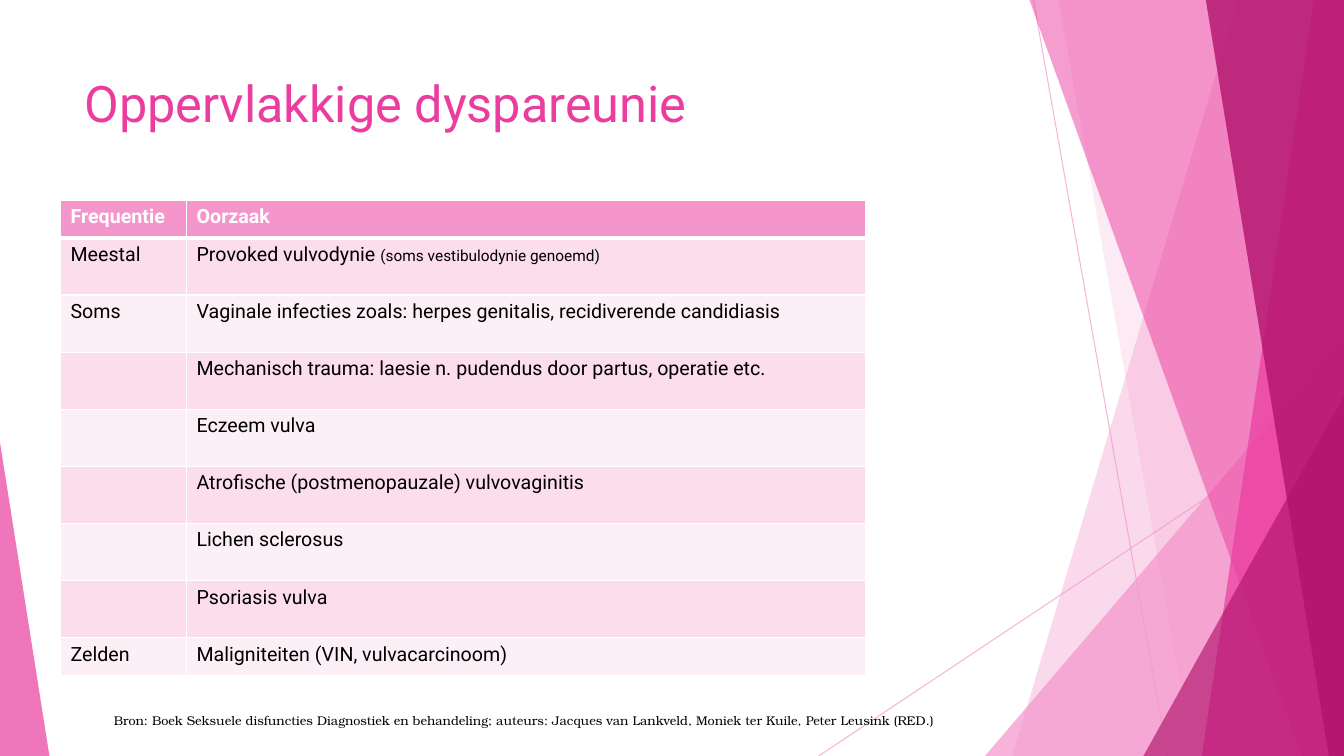
from lxml import etree
from pptx import Presentation, util as u
from pptx.dml.color import RGBColor
from pptx.enum import shapes, text
from pptx.oxml import ns

THEME = {
    "light": "F496CB", "pink": "EB3D9F", "dark": "B2136D",
    "white": "FFFFFF", "black": "000000", "bands": ("FBDDEC", "FDEFF6"),
    "sans": "Roboto", "serif": "TeX Gyre Bonum",
    "title": 36, "body": 14, "small": 11, "source": 9,
}
WIDTH, HEIGHT = 13.33, 7.5

TITLE = "Oppervlakkige dyspareunie"
SOURCE = ("Bron: Boek Seksuele disfuncties Diagnostiek en behandeling; auteurs: "
          "Jacques van Lankveld, Moniek ter Kuile, Peter Leusink (RED.)")
HEADER = ("Frequentie", "Oorzaak")
CAUSES = [
    ("Meestal", "Provoked vulvodynie ", "(soms vestibulodynie genoemd)"),
    ("Soms", "Vaginale infecties zoals: herpes genitalis, recidiverende candidiasis"),
    ("", "Mechanisch trauma: laesie n. pudendus door partus, operatie etc."),
    ("", "Eczeem vulva"),
    ("", "Atrofische (postmenopauzale) vulvovaginitis"),
    ("", "Lichen sclerosus"),
    ("", "Psoriasis vulva"),
    ("Zelden", "Maligniteiten (VIN, vulvacarcinoom)"),
]
TABLE_LEFT, TABLE_TOP, TABLE_HEIGHT = 0.6, 1.99, 4.71
COLUMN_WIDTHS = (1.25, 6.74)
END_ROW_HEIGHT = 0.37

RAYS = [((10.25, 0), (11.58, HEIGHT)), ((WIDTH, 4.03), (8.12, HEIGHT))]
FACETS = [
    ("band", 12.28, 10.04, "light", 36),
    ("band", 10.5, 11.83, "light", 20),
    ("triangle", 9.77, 3.33, "light", 72),
    ("band", 10.21, 12.91, "pink", 50),
    ("band", 13.03, 11.92, "pink", 70),
    ("band", 11.96, 13.18, "dark", 80),
    ("triangle", 11.34, 3.93, "dark", 66),
]
CORNER = (0.49, 4.39, "pink", 70)


def set_opacity(fill_parent, percent):
    color = fill_parent.find(".//" + ns.qn("a:srgbClr"))
    etree.SubElement(color, ns.qn("a:alpha"), val=str(percent * 1000))


def paint(shape, color, opacity):
    shape.shadow.inherit = False
    shape.fill.solid()
    shape.fill.fore_color.rgb = RGBColor.from_string(THEME[color])
    set_opacity(shape._element.spPr, opacity)
    shape.line.fill.background()


def add_ray(slide, start, end):
    points = [u.Inches(value) for value in start + end]
    ray = slide.shapes.add_connector(shapes.MSO_CONNECTOR.STRAIGHT, *points)
    ray.line.width = u.Pt(0.75)
    ray.line.color.rgb = RGBColor.from_string(THEME["light"])
    properties = ray._element.spPr
    set_opacity(properties, 70)
    etree.SubElement(properties, ns.qn("a:effectLst"))


def add_band(slide, top_x, bottom_x, color, opacity):
    corners = [(WIDTH, 0), (WIDTH, HEIGHT), (bottom_x, HEIGHT)]
    builder = slide.shapes.build_freeform(u.Inches(top_x), 0)
    builder.add_line_segments([(u.Inches(x), u.Inches(y)) for x, y in corners])
    paint(builder.convert_to_shape(), color, opacity)


def add_triangle(slide, left, right, top, apex, color, opacity):
    triangle = slide.shapes.add_shape(
        shapes.MSO_SHAPE.ISOSCELES_TRIANGLE, u.Inches(left), u.Inches(top),
        u.Inches(right - left), u.Inches(HEIGHT - top))
    triangle.adjustments[0] = apex
    paint(triangle, color, opacity)


def add_run(paragraph, content, size, color, font="sans", bold=False):
    run = paragraph.add_run()
    run.text = content
    run.font.size = u.Pt(THEME[size])
    run.font.name = THEME[font]
    run.font.bold = bold
    run.font.color.rgb = RGBColor.from_string(THEME[color])


def add_text(slide, box, content, size, color, font):
    frame = slide.shapes.add_textbox(*[u.Inches(value) for value in box]).text_frame
    frame.word_wrap = True
    frame.vertical_anchor = text.MSO_ANCHOR.TOP
    add_run(frame.paragraphs[0], content, size, color, font)


def style_cell(cell, row, fill):
    properties = cell._tc.get_or_add_tcPr()
    widths = {"L": 1, "R": 1, "T": 3 if row == 1 else 1, "B": 3 if row == 0 else 1}
    for side, width in widths.items():
        border = etree.SubElement(properties, ns.qn("a:ln" + side), w=str(u.Pt(width)))
        solid = etree.SubElement(border, ns.qn("a:solidFill"))
        etree.SubElement(solid, ns.qn("a:srgbClr"), val=THEME["white"])
    cell.fill.solid()
    cell.fill.fore_color.rgb = RGBColor.from_string(fill)


def add_causes(slide):
    rows = [HEADER] + CAUSES
    table = slide.shapes.add_table(
        len(rows), len(HEADER), u.Inches(TABLE_LEFT), u.Inches(TABLE_TOP),
        u.Inches(sum(COLUMN_WIDTHS)), u.Inches(TABLE_HEIGHT)).table
    table.horz_banding = False
    for column, width in zip(table.columns, COLUMN_WIDTHS):
        column.width = u.Inches(width)
    last = len(rows) - 1
    middle_height = (TABLE_HEIGHT - 2 * END_ROW_HEIGHT) / (last - 1)
    for row, (frequency, *cause) in enumerate(rows):
        is_header = row == 0
        height = END_ROW_HEIGHT if row in (0, last) else middle_height
        table.rows[row].height = u.Inches(height)
        fill = THEME["light"] if is_header else THEME["bands"][(row - 1) % 2]
        color = "white" if is_header else "black"
        for column, parts in enumerate(([frequency], cause)):
            cell = table.cell(row, column)
            style_cell(cell, row, fill)
            for content, size in zip(parts, ("body", "small")):
                if content:
                    add_run(cell.text_frame.paragraphs[0], content, size, color,
                            bold=is_header)


def main():
    presentation = Presentation()
    presentation.slide_width = u.Inches(WIDTH)
    presentation.slide_height = u.Inches(HEIGHT)
    slide = presentation.slides.add_slide(presentation.slide_layouts[6])
    for start, end in RAYS:
        add_ray(slide, start, end)
    for kind, first, second, color, opacity in FACETS:
        if kind == "band":
            add_band(slide, first, second, color, opacity)
        else:
            add_triangle(slide, first, WIDTH, second, 1, color, opacity)
    right, top, color, opacity = CORNER
    add_triangle(slide, 0, right, top, 0, color, opacity)
    add_text(slide, (0.74, 0.67, 9.4, 1.44), TITLE, "title", "pink", "sans")
    add_text(slide, (1.03, 7.02, 10.08, 0.25), SOURCE, "source", "black", "serif")
    add_causes(slide)
    presentation.save("out.pptx")


if __name__ == "__main__":
    main()
